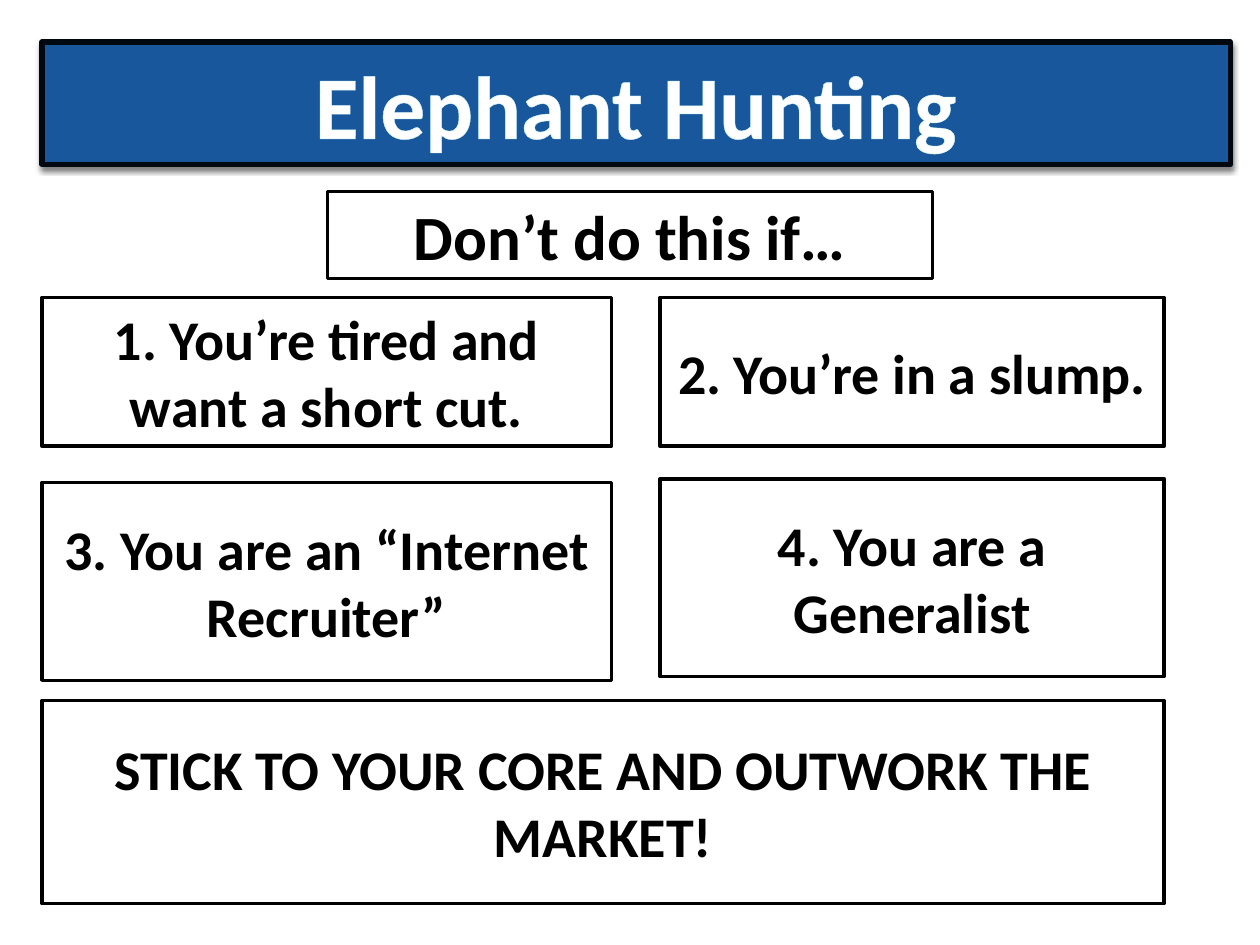
from lxml.etree import SubElement as Sub
from pptx import Presentation as Deck
from pptx.dml.color import RGBColor as Rgb
from pptx.enum.shapes import MSO_SHAPE as Kind
from pptx.enum.text import MSO_ANCHOR as Anchor, MSO_AUTO_SIZE as Auto, PP_ALIGN as Align
from pptx.oxml import parse_xml
from pptx.oxml.ns import nsdecls, qn
from pptx.util import Pt

HUES = {"blue": "18579B", "navy": "02080F", "ice": "CCF2FD",
        "white": "FFFFFF", "black": "000000"}
LEFT, RIGHT = 24, 377.3
WIDE, SLIM = 325.4, 288
FULL = RIGHT + SLIM - LEFT


def hue(name):
    return Rgb.from_string(HUES[name])


def put(item, values):
    for name, value in values.items():
        setattr(item, name, value)


def style(shape, area, fill, edge, width):
    put(shape, dict(zip(("left", "top", "width", "height"), map(Pt, area))))
    shape.fill.solid()
    shape.fill.fore_color.rgb = hue(fill)
    shape.line.color.rgb = hue(edge)
    shape.line.width = Pt(width)


def write(shape, text, size, tint, after=0):
    frame = shape.text_frame
    put(frame, {"word_wrap": True, "auto_size": Auto.NONE,
                "vertical_anchor": Anchor.MIDDLE})
    para = frame.paragraphs[0]
    put(para, {"alignment": Align.CENTER, "space_after": Pt(after)})
    run = para.add_run()
    run.text = text
    put(run.font, {"name": "Calibri", "size": Pt(size), "bold": True})
    run.font.color.rgb = hue(tint)
    return run


def add_title(slide, text):
    title = slide.shapes.title
    style(title, (LEFT, 24, 679, 70), "blue", "navy", 3)
    glow = parse_xml(
        f'<a:effectLst {nsdecls("a")}><a:outerShdw blurRad="{Pt(3)}" '
        f'dist="{Pt(2)}" dir="5400000" algn="ctr" rotWithShape="0">'
        f'<a:srgbClr val="{HUES["black"]}"><a:alpha val="50000"/></a:srgbClr>'
        '</a:outerShdw></a:effectLst>')
    title.element.spPr.append(glow)
    run = write(title, text, 51, "white")
    rim = parse_xml(f'<a:ln {nsdecls("a")} w="{Pt(1)}"/>')
    Sub(Sub(rim, qn("a:solidFill")), qn("a:srgbClr"), val=HUES["ice"])
    run.font.fill
    run.font._element.insert(0, rim)


def add_box(slide, text, area, size=32, after=0):
    box = slide.shapes.add_shape(Kind.RECTANGLE, *map(Pt, area))
    box.shadow.inherit = False
    style(box, area, "white", "black", 2)
    write(box, text, size, "black", after)


def main():
    deck = Deck()
    put(deck, {"slide_width": Pt(720), "slide_height": Pt(540)})
    slide = deck.slides.add_slide(deck.slide_layouts[5])
    add_title(slide, "Elephant Hunting")
    add_box(slide, "Don’t do this if…", (187.2, 109.4, 345.6, 49.7), 36, 6)
    for text, area in (
        ("1. You’re tired and want a short cut.", (LEFT, 170, WIDE, 85)),
        ("2. You’re in a slump.", (RIGHT, 170, SLIM, 85)),
        ("3. You are an “Internet Recruiter”", (LEFT, 275.8, WIDE, 113)),
        ("4. You are a Generalist", (RIGHT, 273.6, SLIM, 113)),
    ):
        add_box(slide, text, area)
    add_box(slide, "STICK TO YOUR CORE AND OUTWORK THE MARKET!",
            (LEFT, 400.3, FULL, 116), after=6)
    deck.save("out.pptx")


if __name__ == "__main__":
    main()
